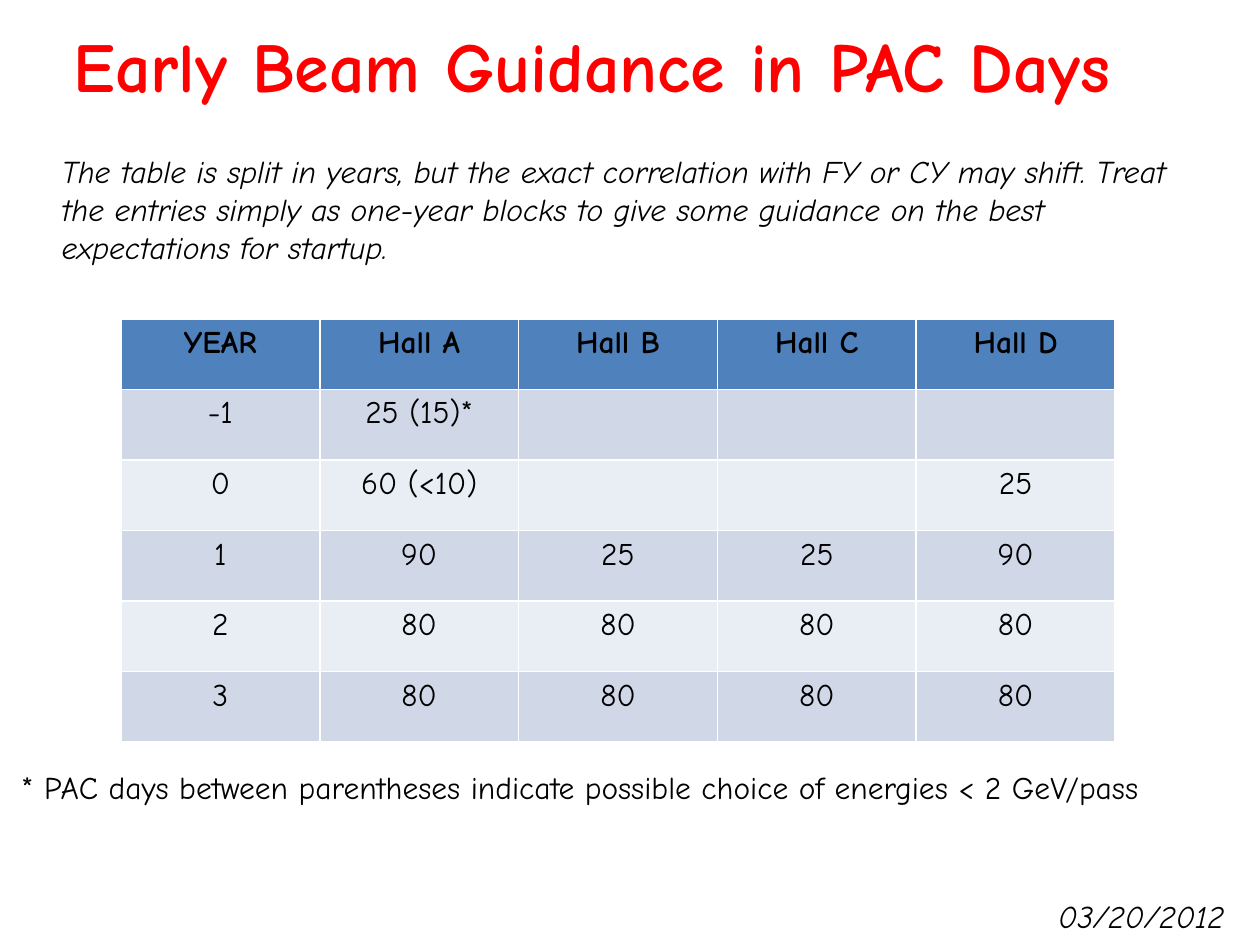
import pptx
import pptx.util
import pptx.dml.color
import pptx.enum.text

NOTES = [
    dict(text="Early Beam Guidance in PAC Days", at=(0.4, 1.3, 93.2, 11.8),
         size="title", color="title", bold=True, align="CENTER"),
    dict(text="* PAC days between parentheses indicate possible choice of energies < 2 GeV/pass",
         at=(0.7, 60.5, 99.2, 4), wrap=False),
    dict(text="The table is split in years, but the exact correlation with FY or CY may shift. "
              "Treat the entries simply as one-year blocks to give some guidance on the best "
              "expectations for startup.",
         at=(3.9, 11.6, 92.3, 10.1), italic=True),
    dict(text="03/20/2012", at=(83, 70.7, 16.6, 4), italic=True, wrap=False),
]
DAYS = [
    ("YEAR", "Hall A", "Hall B", "Hall C", "Hall D"),
    ("-1", "25 (15)*", "", "", ""),
    ("0", "60 (<10)", "", "", "25"),
    ("1", "90", "25", "25", "90"),
    ("2", "80", "80", "80", "80"),
    ("3", "80", "80", "80", "80"),
]
TABLE = (9.6, 25.3, 78.9, 33.6)
THEME = dict(
    font="Comic Neue",
    size=dict(title=40, body=18),
    color=dict(title="FF0000", body="000000", head="4F81BD", odd="D0D8E8", even="E9EDF4"),
)
COLS, ROWS = 100, 75

deck = pptx.Presentation()
deck.slide_width = pptx.util.Inches(10)
deck.slide_height = pptx.util.Inches(7.5)
slide = deck.slides.add_slide(deck.slide_layouts[6])


def place(left, top, width, height):
    col, row = deck.slide_width / COLS, deck.slide_height / ROWS
    return [round(n) for n in (left * col, top * row, width * col, height * row)]


def tint(name):
    return pptx.dml.color.RGBColor.from_string(THEME["color"][name])


def write(frame, text, size="body", color="body", bold=False, italic=False,
          align="LEFT", wrap=True):
    frame.word_wrap = wrap
    para = frame.paragraphs[0]
    para.alignment = pptx.enum.text.PP_ALIGN[align]
    run = para.add_run()
    run.text = text
    font = run.font
    font.name = THEME["font"]
    font.size = pptx.util.Pt(THEME["size"][size])
    font.color.rgb = tint(color)
    font.bold, font.italic = bold, italic


table = slide.shapes.add_table(len(DAYS), len(DAYS[0]), *place(*TABLE)).table
for r, line in enumerate(DAYS):
    band = "head" if r == 0 else "odd" if r % 2 else "even"
    for c, text in enumerate(line):
        cell = table.cell(r, c)
        cell.fill.solid()
        cell.fill.fore_color.rgb = tint(band)
        if text:
            write(cell.text_frame, text, bold=r == 0, align="CENTER")

for note in NOTES:
    look = {key: val for key, val in note.items() if key != "at"}
    write(slide.shapes.add_textbox(*place(*note["at"])).text_frame, **look)

deck.save("out.pptx")
